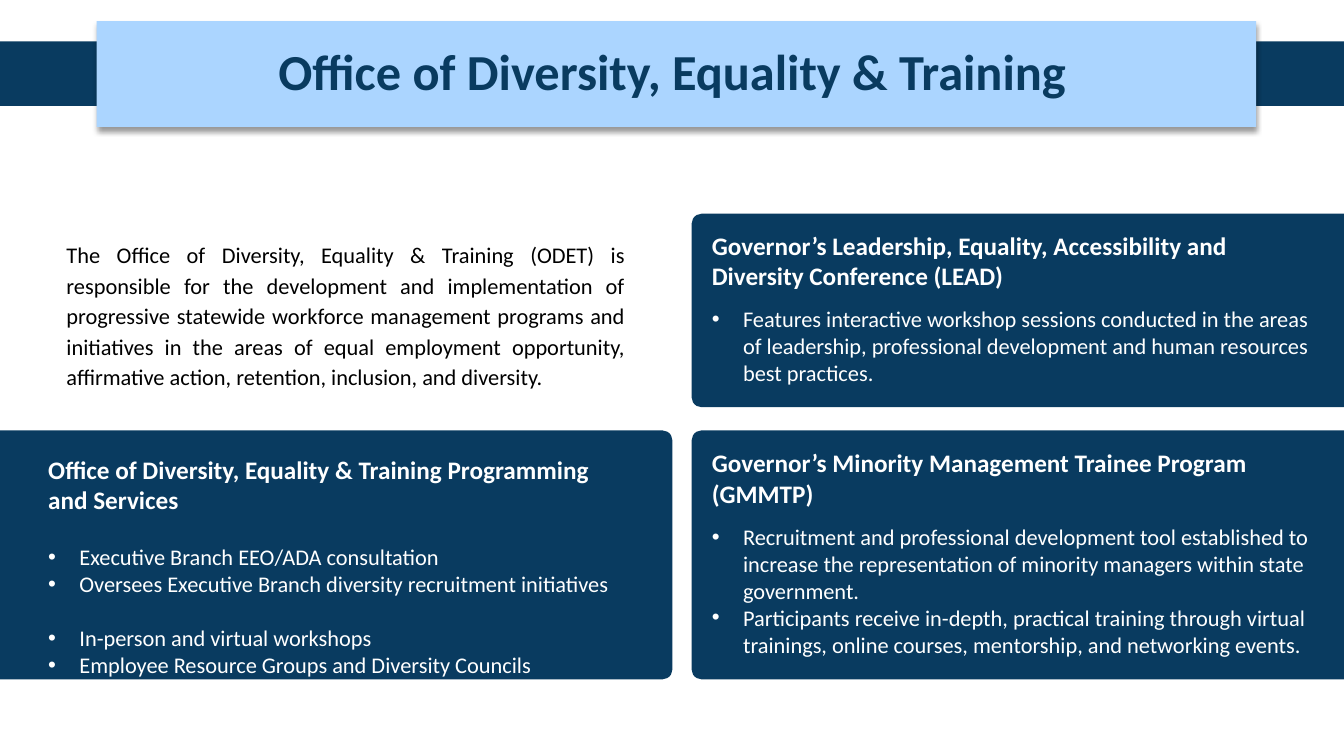
from lxml import etree
from pptx import Presentation
from pptx.dml.color import RGBColor
from pptx.enum.shapes import MSO_SHAPE
from pptx.enum.text import MSO_ANCHOR, MSO_AUTO_SIZE, PP_ALIGN
from pptx.oxml.ns import qn
from pptx.util import Inches, Pt

RECT, ROUNDED = MSO_SHAPE.RECTANGLE, MSO_SHAPE.ROUNDED_RECTANGLE
TOP, MIDDLE = MSO_ANCHOR.TOP, MSO_ANCHOR.MIDDLE
LEFT, CENTER, JUSTIFY = PP_ALIGN.LEFT, PP_ALIGN.CENTER, PP_ALIGN.JUSTIFY

FONT = "Calibri"
NAVY, SKY, WHITE, BLACK = "093B60", "ABD5FF", "FFFFFF", "000000"

# Grid in inches: two card columns that bleed off the sides, and two rows
SLIDE_W, SLIDE_H = 13.33, 7.5
CARD_W, RADIUS = 7.06, 0.1
CARD_X = (-0.39, 6.86)
TEXT_X = (0.38, 6.96)
ROWS = ((2.12, 1.92), (4.27, 2.47))  # top, height
HEADING_W, HEADING_H, LIST_W = 5.79, 0.71, 6.21
BULLET_INDENT = 0.31
LIST_GAP = 19.5

# column, row, heading offset, list offset, heading, list of (text, space after)
CARDS = (
    (1, 0, 0.11, 0.86,
     "Governor’s Leadership, Equality, Accessibility and Diversity Conference (LEAD)",
     [("Features interactive workshop sessions conducted in the areas of leadership, "
       "professional development and human resources best practices.", 0)]),
    (1, 1, 0.12, 0.87,
     "Governor’s Minority Management Trainee Program (GMMTP)",
     [("Recruitment and professional development tool established to increase the "
       "representation of minority managers within state government.", 0),
      ("Participants receive in-depth, practical training through virtual trainings, "
       "online courses, mentorship, and networking events.", 0)]),
    (0, 1, 0.19, 1.07,
     "Office of Diversity, Equality & Training Programming and Services",
     [("Executive Branch EEO/ADA consultation", 0),
      ("Oversees Executive Branch diversity recruitment initiatives", LIST_GAP),
      ("In-person and virtual workshops", 0),
      ("Employee Resource Groups and Diversity Councils", 0)]),
)
MISSION = ("The Office of Diversity, Equality & Training (ODET) is responsible for the "
           "development and implementation of progressive statewide workforce management "
           "programs and initiatives in the areas of equal employment opportunity, "
           "affirmative action, retention, inclusion, and diversity.")


def rgb(color):
    return RGBColor.from_string(color)


def add_block(slide, kind, x, y, w, h, color):
    sp = slide.shapes.add_shape(kind, Inches(x), Inches(y), Inches(w), Inches(h))
    sp.shadow.inherit = False
    sp.fill.solid()
    sp.fill.fore_color.rgb = rgb(color)
    sp.line.fill.background()
    if kind == ROUNDED:
        sp.adjustments[0] = RADIUS / h
    return sp


def add_drop_shadow(sp):
    effects = sp.element.spPr.find(qn("a:effectLst"))
    shadow = etree.SubElement(effects, qn("a:outerShdw"), blurRad=str(Pt(4)),
                              dist=str(Pt(3)), dir="5400000", rotWithShape="0")
    color = etree.SubElement(shadow, qn("a:srgbClr"), val=BLACK)
    etree.SubElement(color, qn("a:alpha"), val="40000")


def text_frame(slide, x, y, w, h, holder=None, anchor=TOP, inset=None):
    """Place a placeholder in front, or a new text box, and return its frame."""
    sp = holder or slide.shapes.add_textbox(0, 0, 0, 0)
    sp.left, sp.top, sp.width, sp.height = (Inches(v) for v in (x, y, w, h))
    sp.element.getparent().append(sp.element)
    tf = sp.text_frame
    tf.word_wrap = True
    tf.auto_size = MSO_AUTO_SIZE.NONE
    tf.vertical_anchor = anchor
    if inset is not None:
        tf.margin_left = tf.margin_right = Inches(inset)
        tf.margin_top = tf.margin_bottom = Inches(inset)
    return tf


def add_bullet(p):
    pPr = p._p.get_or_add_pPr()
    pPr.set("marL", str(Inches(BULLET_INDENT)))
    pPr.set("indent", str(-Inches(BULLET_INDENT)))
    etree.SubElement(pPr, qn("a:buFont"), typeface="Arial")
    etree.SubElement(pPr, qn("a:buChar"), char="•")


def write(tf, text, size=16, color=WHITE, bold=False, align=LEFT,
          spacing=1.0, after=0, bullet=False):
    p = tf.add_paragraph() if tf.text else tf.paragraphs[0]
    p.alignment = align
    p.line_spacing = spacing
    p.space_before, p.space_after = Pt(0), Pt(after)
    if bullet:
        add_bullet(p)
    r = p.add_run()
    r.text = text
    r.font.name, r.font.size, r.font.bold = FONT, Pt(size), bold
    r.font.color.rgb = rgb(color)


def add_banner(slide):
    for x in (0, SLIDE_W - 1.21):
        add_block(slide, RECT, x, 0.41, 1.21, 0.64, NAVY)
    add_drop_shadow(add_block(slide, RECT, 0.96, 0.21, 11.5, 1.05, SKY))
    tf = text_frame(slide, 0.92, 0.35, 11.5, 0.77, slide.shapes.title, MIDDLE)
    write(tf, "Office of Diversity, Equality & Training", size=36, color=NAVY,
          bold=True, align=CENTER, spacing=0.9)


def add_card(slide, card, heading_holder, list_holder):
    col, row, heading_dy, list_dy, heading, items = card
    top, height = ROWS[row]
    add_block(slide, ROUNDED, CARD_X[col], top, CARD_W, height, NAVY)
    tf = text_frame(slide, TEXT_X[col], top + heading_dy, HEADING_W, HEADING_H,
                    heading_holder)
    write(tf, heading, size=18, bold=True)
    tf = text_frame(slide, TEXT_X[col], top + list_dy, LIST_W, height - list_dy,
                    list_holder)
    for text, after in items:
        write(tf, text, after=after, bullet=True)


def main():
    prs = Presentation()
    prs.slide_width, prs.slide_height = Inches(SLIDE_W), Inches(SLIDE_H)
    slide = prs.slides.add_slide(prs.slide_layouts.get_by_name("Comparison"))
    bodies = list(slide.placeholders)[1:]

    # Title banner
    add_banner(slide)

    # Mission statement
    tf = text_frame(slide, 0.66, 2.36, 5.54, 1.52, inset=0)
    write(tf, MISSION, color=BLACK, align=JUSTIFY, spacing=Pt(21.8))

    # Programme cards: the layout's heading and list pairs, then text boxes
    holders = [bodies[:2], bodies[2:], (None, None)]
    for card, (heading_holder, list_holder) in zip(CARDS, holders):
        add_card(slide, card, heading_holder, list_holder)

    prs.save("out.pptx")


if __name__ == "__main__":
    main()
